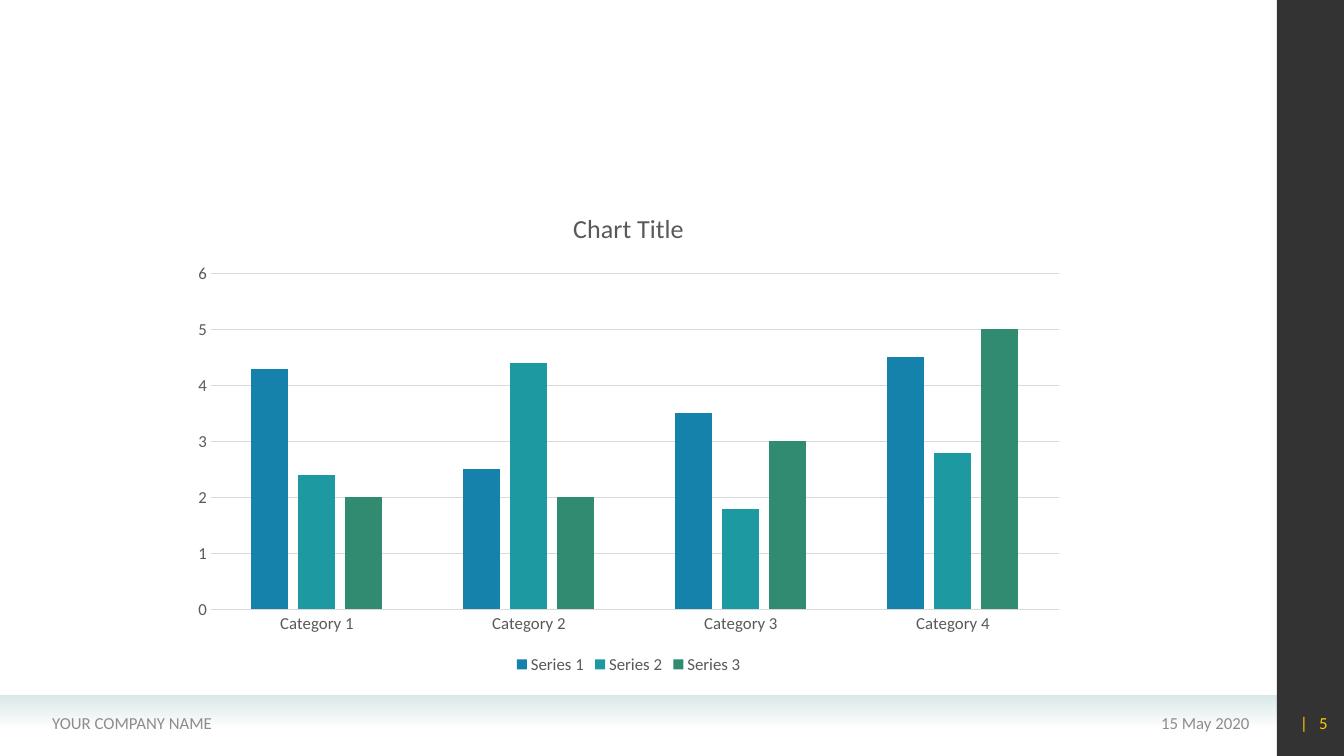
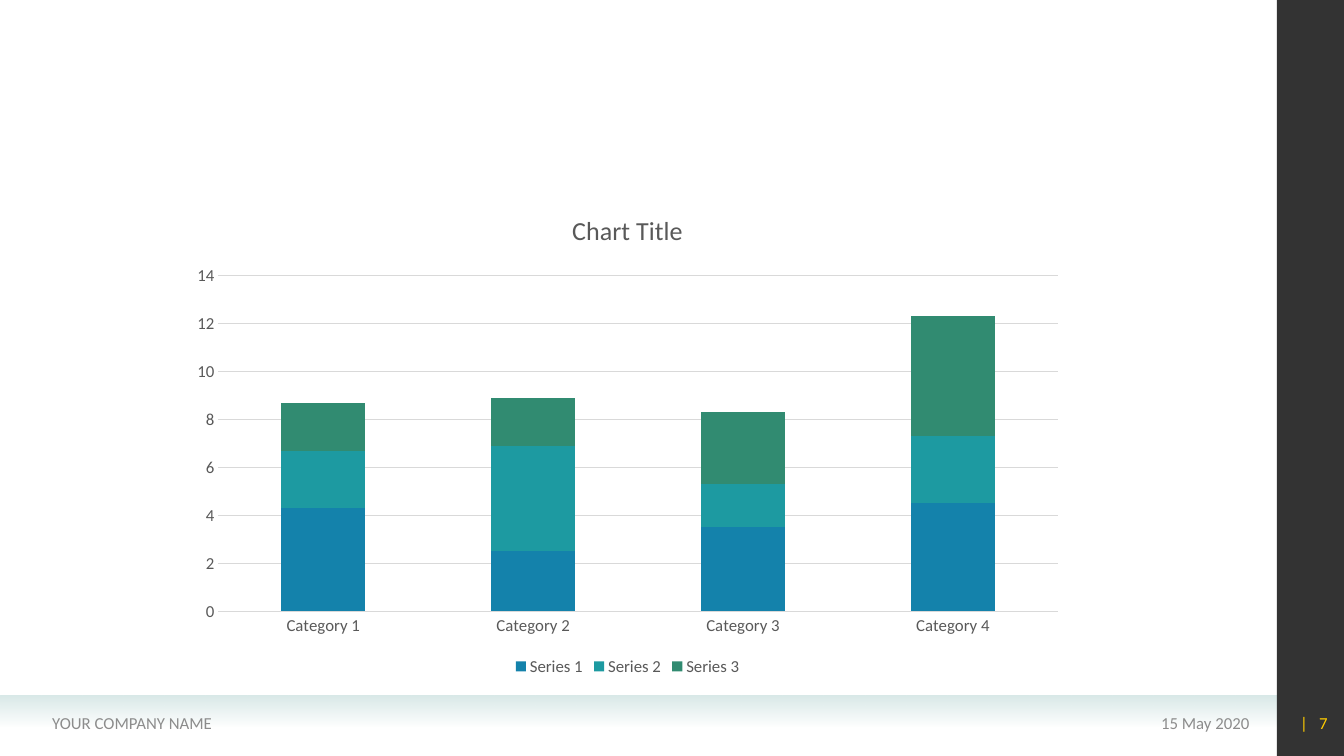
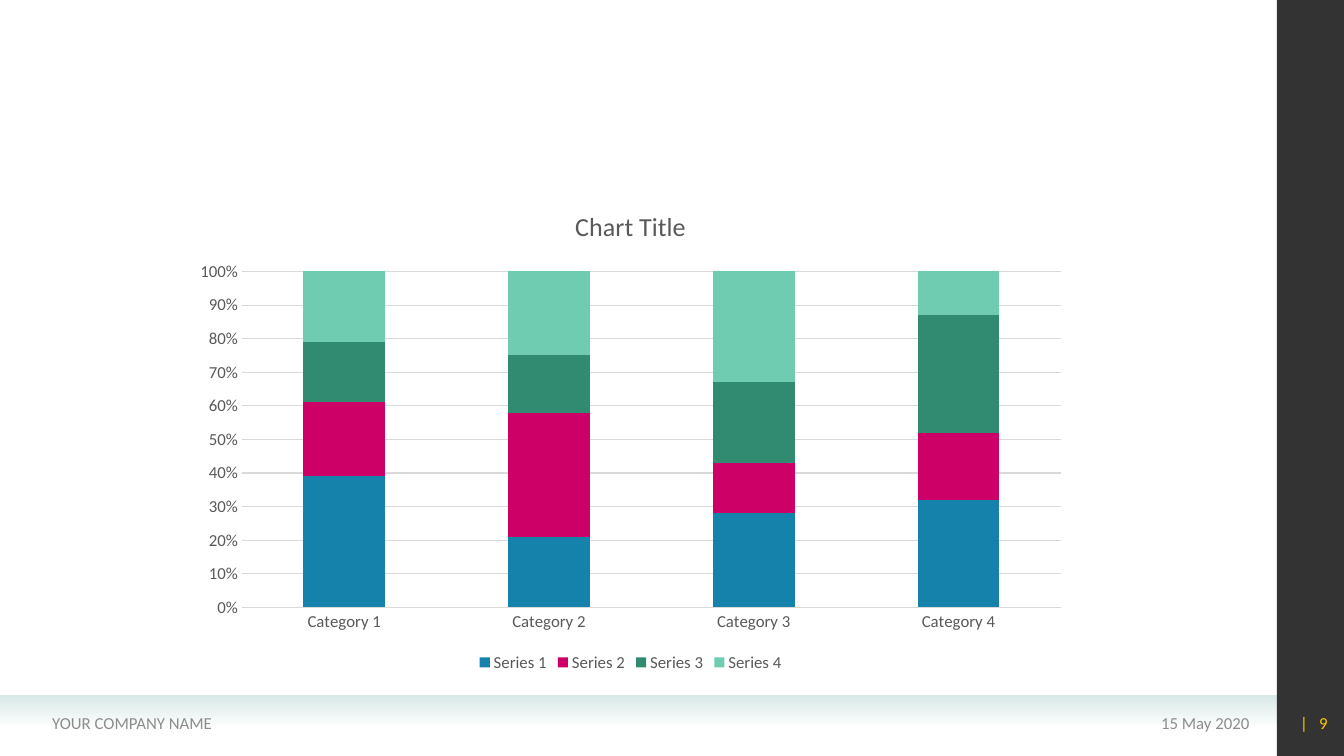
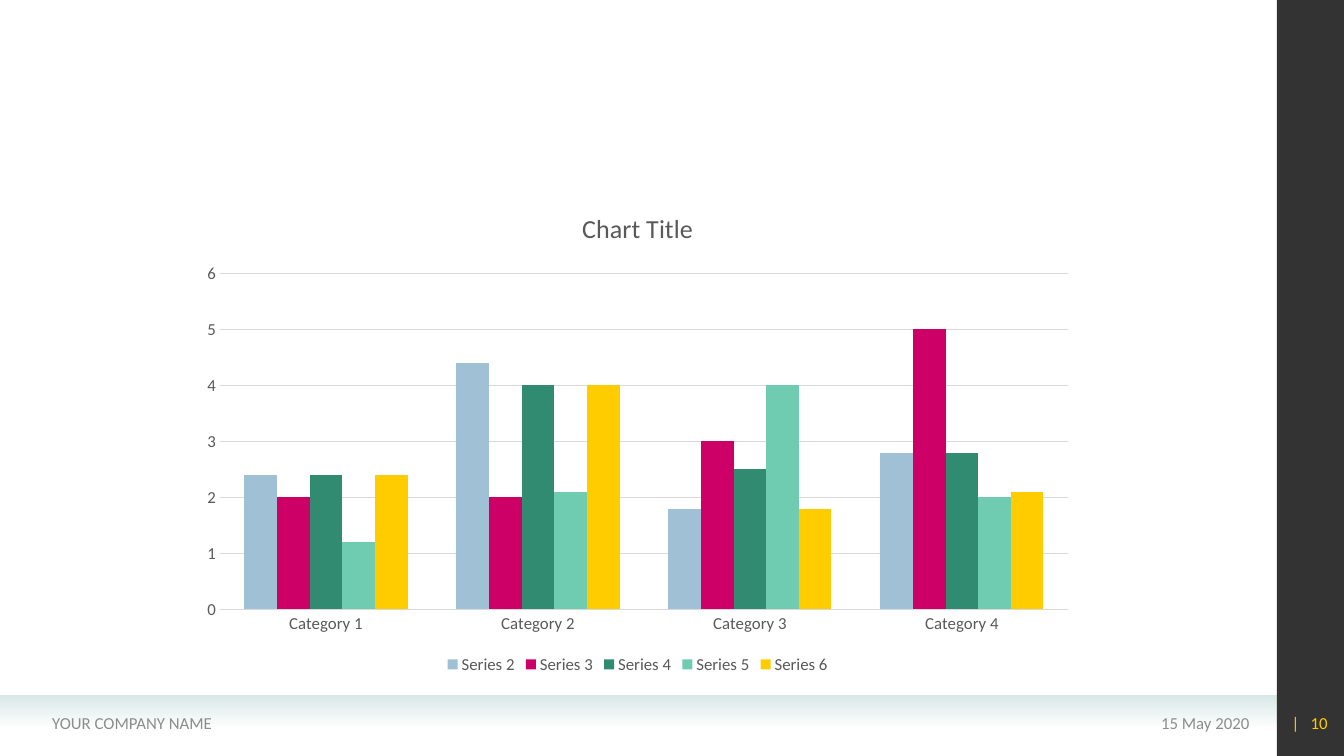
from lxml.etree import SubElement
from pptx import Presentation
from pptx.chart.data import CategoryChartData
from pptx.dml.color import RGBColor
from pptx.enum.chart import XL_CHART_TYPE as ChartType
from pptx.enum.chart import XL_LEGEND_POSITION as LegendPosition
from pptx.enum.chart import XL_TICK_MARK as TickMark
from pptx.enum.shapes import MSO_SHAPE as Shape
from pptx.enum.text import MSO_ANCHOR as Anchor
from pptx.enum.text import PP_ALIGN as Align
from pptx.oxml.ns import qn
from pptx.util import Inches, Pt

FONT = "Calibri"
BLACK = RGBColor(0x00, 0x00, 0x00)
MIST = RGBColor(0xD9, 0xE9, 0xE8)
FOOTER_GREY = RGBColor(0x8C, 0x8C, 0x8C)
LABEL_GREY = RGBColor(0x59, 0x59, 0x59)
LINE_GREY = RGBColor(0xD9, 0xD9, 0xD9)
BLUE = RGBColor(0x14, 0x82, 0xAB)
TEAL = RGBColor(0x1D, 0x9A, 0xA1)
GREEN = RGBColor(0x31, 0x8B, 0x71)
MINT = RGBColor(0x70, 0xCC, 0xB1)
MAGENTA = RGBColor(0xCC, 0x00, 0x66)
PALE_BLUE = RGBColor(0xA0, 0xC1, 0xD5)
YELLOW = RGBColor(0xFF, 0xCC, 0x00)

PAGE_WIDTH, PAGE_HEIGHT = 13.33, 7.5
SIDEBAR_WIDTH = PAGE_WIDTH / 20
MAIN_WIDTH = PAGE_WIDTH - SIDEBAR_WIDTH
BAND_TOP, BAND_HEIGHT = 6.9, 0.31
FOOTER_TOP, FOOTER_HEIGHT = 6.97, 0.4
CHART_WIDTH, CHART_HEIGHT = 8.89, 4.84

CATEGORIES = [f"Category {number}" for number in range(1, 5)]
THREE_SERIES = [
    ("Series 1", (4.3, 2.5, 3.5, 4.5), BLUE),
    ("Series 2", (2.4, 4.4, 1.8, 2.8), TEAL),
    ("Series 3", (2, 2, 3, 5), GREEN),
]
SHARE_SERIES = [
    ("Series 1", (39, 21, 28, 32), BLUE),
    ("Series 2", (22, 37, 15, 20), MAGENTA),
    ("Series 3", (18, 17, 24, 35), GREEN),
    ("Series 4", (21, 25, 33, 13), MINT),
]
FIVE_SERIES = [
    ("Series 2", (2.4, 4.4, 1.8, 2.8), PALE_BLUE),
    ("Series 3", (2, 2, 3, 5), MAGENTA),
    ("Series 4", (2.4, 4, 2.5, 2.8), GREEN),
    ("Series 5", (1.2, 2.1, 4, 2), MINT),
    ("Series 6", (2.4, 4, 1.8, 2.1), YELLOW),
]


def inches(*lengths):
    return [Inches(length) for length in lengths]


def style_font(font, size, color):
    font.name, font.size, font.bold = FONT, Pt(size), False
    font.color.rgb = color


def add_block(page, left, top, width, height):
    block = page.shapes.add_shape(Shape.RECTANGLE, *inches(left, top, width, height))
    block.shadow.inherit = False
    block.line.fill.background()
    return block


def set_alpha(color_element, percent):
    SubElement(color_element, qn("a:alpha")).set("val", str(percent * 1000))


def add_bands(page):
    """Fading footer band and dark bar at the right edge."""
    band = add_block(page, 0, BAND_TOP, MAIN_WIDTH, BAND_HEIGHT)
    band.fill.gradient()
    band.fill.gradient_angle = 270
    for stop in band.fill.gradient_stops:
        stop.color.rgb = MIST
    set_alpha(list(band._element.iter(qn("a:srgbClr")))[-1], 0)

    sidebar = add_block(page, MAIN_WIDTH, 0, SIDEBAR_WIDTH, PAGE_HEIGHT)
    sidebar.fill.solid()
    sidebar.fill.fore_color.rgb = BLACK
    set_alpha(next(sidebar._element.iter(qn("a:srgbClr"))), 80)


def add_footer_text(page, left, width, text, align, color=FOOTER_GREY):
    box = page.shapes.add_textbox(*inches(left, FOOTER_TOP, width, FOOTER_HEIGHT))
    frame = box.text_frame
    frame.word_wrap = True
    frame.vertical_anchor = Anchor.MIDDLE
    para = frame.paragraphs[0]
    para.alignment = align
    style_font(para.font, 12, color)
    para.add_run().text = text
    return para


def add_footer(page, number):
    add_footer_text(page, 9.1, 3.39, "15 May 2020", Align.RIGHT)
    add_footer_text(page, 0.42, 4.9, "YOUR COMPANY NAME", Align.LEFT)
    para = add_footer_text(page, 12.6, SIDEBAR_WIDTH, "| ", Align.RIGHT, YELLOW)
    # Letter spacing sets the bar apart from the page number.
    para.runs[0].font._element.set("spc", "270")
    para.add_run().text = str(number)


def style_axis(axis, line_color=None):
    axis.major_tick_mark = axis.minor_tick_mark = TickMark.NONE
    style_font(axis.tick_labels.font, 12, LABEL_GREY)
    if line_color is None:
        axis.format.line.fill.background()
    else:
        style_line(axis.format.line, line_color)


def style_line(line, color):
    line.color.rgb = color
    line.width = Pt(0.75)


def add_column_chart(page, left, top, kind, series_rows, gap, overlap, base_line):
    data = CategoryChartData()
    data.categories = CATEGORIES
    for name, values, _ in series_rows:
        data.add_series(name, values)
    chart = page.shapes.add_chart(
        kind, *inches(left, top, CHART_WIDTH, CHART_HEIGHT), data
    ).chart
    style_font(chart.font, 10, BLACK)

    chart.has_title = True
    title = chart.chart_title
    title.include_in_layout = False
    title.text_frame.text = "Chart Title"
    style_font(title.text_frame.paragraphs[0].font, 18.6, LABEL_GREY)

    chart.has_legend = True
    chart.legend.position = LegendPosition.BOTTOM
    chart.legend.include_in_layout = False
    style_font(chart.legend.font, 12, LABEL_GREY)

    style_axis(chart.category_axis, base_line)
    style_axis(chart.value_axis)
    chart.value_axis.has_major_gridlines = True
    style_line(chart.value_axis.major_gridlines.format.line, LINE_GREY)
    labels = chart.value_axis.tick_labels
    labels.number_format = "0%" if kind == ChartType.COLUMN_STACKED_100 else "General"
    labels.number_format_is_linked = False

    plot = chart.plots[0]
    plot.vary_by_categories = False
    plot.gap_width, plot.overlap = gap, overlap
    for series, (_, _, color) in zip(plot.series, series_rows):
        series.format.fill.solid()
        series.format.fill.fore_color.rgb = color


def main():
    deck = Presentation()
    deck.slide_width, deck.slide_height = inches(PAGE_WIDTH, PAGE_HEIGHT)
    charts = {
        5: (1.79, 1.89, ChartType.COLUMN_CLUSTERED, THREE_SERIES, 219, -27, LINE_GREY),
        7: (1.78, 1.91, ChartType.COLUMN_STACKED, THREE_SERIES, 150, 100, LINE_GREY),
        9: (1.81, 1.87, ChartType.COLUMN_STACKED_100, SHARE_SERIES, 150, 100, LINE_GREY),
        10: (1.88, 1.89, ChartType.COLUMN_CLUSTERED, FIVE_SERIES, 150, 0, None),
    }
    for number, chart_settings in charts.items():
        page = deck.slides.add_slide(deck.slide_layouts[6])
        add_bands(page)
        add_footer(page, number)
        add_column_chart(page, *chart_settings)
    deck.save("out.pptx")


if __name__ == "__main__":
    main()
